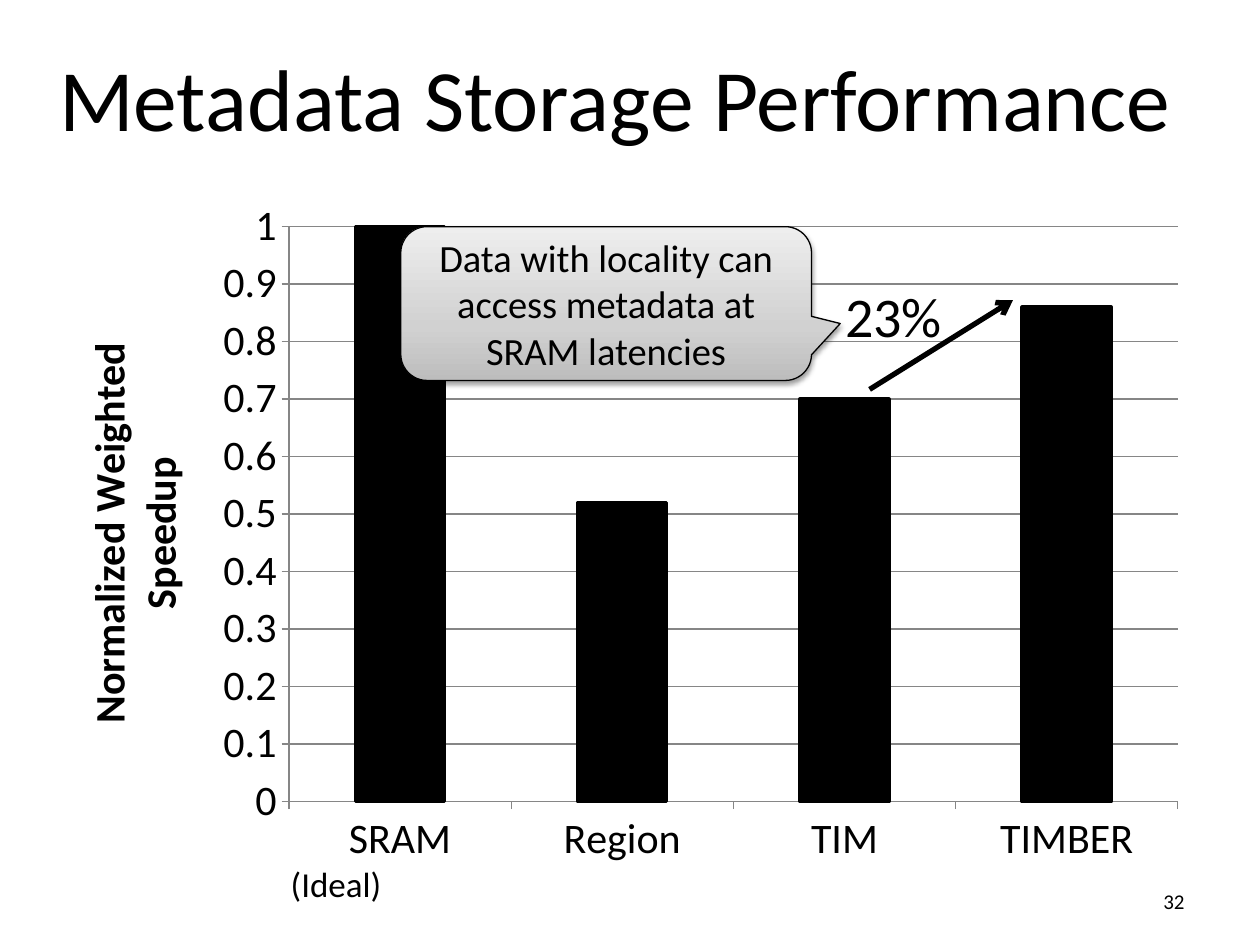
from lxml import etree
from pptx import Presentation
from pptx import util as u
from pptx.chart import data as chart_data
from pptx.dml import color
from pptx.enum import chart as charts, shapes, text
from pptx.oxml import parse_xml
from pptx.oxml import ns

BLACK, GRID = "000000", "868686"
CALLOUT_STOPS = [(0, "BDBDBD"), (35, "D1D1D1"), (100, "EEEEEE")]


def rgb(value):
    return color.RGBColor.from_string(value)


def box(left, top, width, height):
    return [u.Cm(value) for value in (left, top, width, height)]


def set_line(line, value, width):
    line.color.rgb = rgb(value)
    line.width = u.Pt(width)


class SlideBuilder:
    font_name = "Calibri"

    def __init__(self, presentation):
        self.slide = presentation.slides.add_slide(presentation.slide_layouts[5])

    def style_font(self, font, size, bold=False):
        values = {"name": self.font_name, "size": u.Pt(size), "bold": bold}
        for name, value in values.items():
            setattr(font, name, value)
        font.color.rgb = rgb(BLACK)

    def set_text(self, shape, content, size, align="LEFT", anchor="TOP", wrap=True):
        frame = shape.text_frame
        values = {
            "word_wrap": wrap,
            "auto_size": text.MSO_AUTO_SIZE.NONE if wrap
            else text.MSO_AUTO_SIZE.SHAPE_TO_FIT_TEXT,
            "vertical_anchor": getattr(text.MSO_ANCHOR, anchor),
            "margin_left": u.Cm(0.25), "margin_right": u.Cm(0.25),
            "margin_top": u.Cm(0.13), "margin_bottom": u.Cm(0.13),
        }
        for name, value in values.items():
            setattr(frame, name, value)
        paragraph = frame.paragraphs[0]
        paragraph.alignment = getattr(text.PP_ALIGN, align)
        run = paragraph.add_run()
        run.text = content
        self.style_font(run.font, size)

    def title(self, content, place, size):
        shape = self.slide.shapes.title
        shape.left, shape.top, shape.width, shape.height = box(*place)
        self.set_text(shape, content, size, anchor="MIDDLE")

    def text_box(self, content, place, size, **layout):
        shape = self.slide.shapes.add_textbox(*box(*place))
        self.set_text(shape, content, size, **layout)

    def arrow(self, tip, end, width):
        points = [u.Cm(value) for value in (*tip, *end)]
        connector = self.slide.shapes.add_connector(
            shapes.MSO_CONNECTOR.STRAIGHT, *points)
        set_line(connector.line, BLACK, width)
        properties = connector._element.spPr
        head = etree.SubElement(properties.find(ns.qn("a:ln")), ns.qn("a:headEnd"))
        head.set("type", "arrow")
        etree.SubElement(properties, ns.qn("a:effectLst"))

    def callout(self, content, place, size, adjustments):
        shape = self.slide.shapes.add_shape(
            shapes.MSO_SHAPE.ROUNDED_RECTANGULAR_CALLOUT, *box(*place))
        for index, value in enumerate(adjustments):
            shape.adjustments[index] = value
        set_line(shape.line, BLACK, 0.75)
        shape.shadow.inherit = False
        properties = shape._element.spPr

        # Gradient running from bottom to top
        stops = "".join(
            f'<a:gs pos="{position * 1000}"><a:srgbClr val="{value}"/></a:gs>'
            for position, value in CALLOUT_STOPS)
        gradient = parse_xml(
            f'<a:gradFill {ns.nsdecls("a")} rotWithShape="1"><a:gsLst>{stops}'
            '</a:gsLst><a:lin ang="16200000" scaled="0"/></a:gradFill>')
        properties.find(ns.qn("a:prstGeom")).addnext(gradient)

        # Soft shadow below
        properties.find(ns.qn("a:effectLst")).append(parse_xml(
            f'<a:outerShdw {ns.nsdecls("a")} blurRad="{u.Pt(3.1)}" '
            f'dist="{u.Pt(1.6)}" dir="5400000" rotWithShape="0">'
            f'<a:srgbClr val="{BLACK}"><a:alpha val="38000"/></a:srgbClr>'
            '</a:outerShdw>'))
        self.set_text(shape, content, size, align="CENTER", anchor="MIDDLE")

    def column_chart(self, values, place, axis_title, size, plot_area):
        data = chart_data.CategoryChartData()
        data.categories = list(values)
        data.add_series("Series 1", list(values.values()))
        chart = self.slide.shapes.add_chart(
            charts.XL_CHART_TYPE.COLUMN_CLUSTERED, *box(*place), data).chart
        chart.has_legend = chart.has_title = False
        self.style_font(chart.font, size)

        # Columns
        plot = chart.plots[0]
        plot.gap_width = 150
        plot.vary_by_categories = False
        series = plot.series[0]
        series.format.fill.solid()
        series.format.fill.fore_color.rgb = rgb(BLACK)
        set_line(series.format.line, BLACK, 2)

        # Axes
        value_axis = chart.value_axis
        settings = {"minimum_scale": 0, "maximum_scale": 1, "major_unit": 0.1,
                    "has_major_gridlines": True}
        for name, value in settings.items():
            setattr(value_axis, name, value)
        value_axis.tick_labels.number_format = "General"
        value_axis.tick_labels.number_format_is_linked = False
        for axis in (chart.category_axis, value_axis):
            axis.major_tick_mark = charts.XL_TICK_MARK.OUTSIDE
            set_line(axis.format.line, GRID, 0.75)
        set_line(value_axis.major_gridlines.format.line, GRID, 0.75)
        frame = value_axis.axis_title.text_frame
        frame.text = axis_title
        self.style_font(frame.paragraphs[0].runs[0].font, size, bold=True)

        # Fixed inner plot area, as fractions of the chart
        modes = '<c:xMode val="edge"/><c:yMode val="edge"/>'
        parts = "".join(f'<c:{name} val="{value}"/>'
                        for name, value in zip("xywh", plot_area))
        layout = parse_xml(
            f'<c:layout {ns.nsdecls("c")}><c:manualLayout>'
            f'<c:layoutTarget val="inner"/>{modes}{parts}'
            '</c:manualLayout></c:layout>')
        area = chart._chartSpace.chart.plotArea
        for old in area.findall(ns.qn("c:layout")):
            area.remove(old)
        area.insert(0, layout)


def main():
    presentation = Presentation()
    presentation.slide_width, presentation.slide_height = u.Cm(25.4), u.Cm(19.05)
    builder = SlideBuilder(presentation)

    # Speedup chart
    speedups = {"SRAM": 1, "Region": 0.52, "TIM": 0.7, "TIMBER": 0.86}
    builder.column_chart(speedups, (0.94, 3.73, 23.27, 13.97),
                         "Normalized Weighted Speedup", 24,
                         (0.21, 0.06, 0.77, 0.83))

    # Title and slide number
    builder.text_box("32", (18.21, 17.65, 5.92, 1.02), 12,
                     align="RIGHT", anchor="MIDDLE")
    builder.title("Metadata Storage Performance", (0.94, 1.17, 23.27, 1.57), 50)

    # Notes on the columns
    builder.arrow((20.42, 6.05), (17.53, 7.85), 3)
    builder.text_box("23%", (16.79, 5.54, 2.49, 1.63), 32, wrap=False)
    builder.callout("Data with locality can access metadata at SRAM latencies",
                    (8.08, 4.57, 8.28, 3.1), 22, (0.57, 0.13, 0.17))
    builder.text_box("(Ideal)", (5.61, 17.25, 2.36, 1.12), 20, wrap=False)

    presentation.save("out.pptx")


if __name__ == "__main__":
    main()
